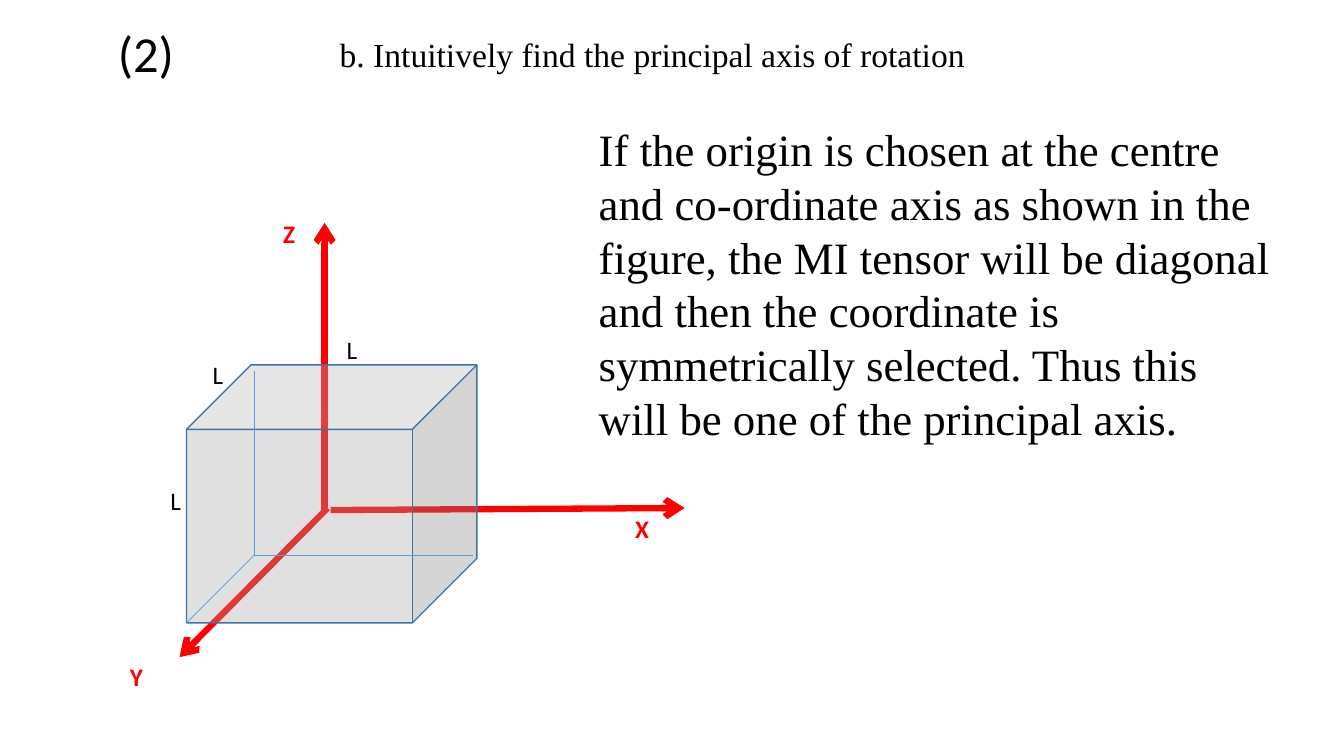
import pptx
import pptx.util
import pptx.dml.color
import pptx.enum.shapes
import pptx.oxml.ns
import lxml.etree
from pptx.util import Inches

RED = pptx.dml.color.RGBColor(0xFF, 0x00, 0x00)
BLACK = pptx.dml.color.RGBColor(0x00, 0x00, 0x00)
GRAY = pptx.dml.color.RGBColor(0xA6, 0xA6, 0xA6)
EDGE_BLUE = pptx.dml.color.RGBColor(0x43, 0x73, 0x9E)
HIDDEN_BLUE = pptx.dml.color.RGBColor(0x5B, 0x9B, 0xD5)

deck = pptx.Presentation()
deck.slide_width, deck.slide_height = Inches(13.33), Inches(7.5)
page = deck.slides.add_slide(deck.slide_layouts[6])


def add_text(text, left, top, width, height, size, font="Calibri",
             color=BLACK, bold=False, wrap=True):
    box = page.shapes.add_textbox(Inches(left), Inches(top), Inches(width), Inches(height))
    box.text_frame.word_wrap = wrap
    para = box.text_frame.paragraphs[0]
    para.text = text
    para.font.size = pptx.util.Pt(size)
    para.font.name = font
    para.font.bold = bold
    para.font.color.rgb = color
    return para


def add_line(start, end, color, weight):
    line = page.shapes.add_connector(
        pptx.enum.shapes.MSO_CONNECTOR.STRAIGHT,
        Inches(start[0]), Inches(start[1]), Inches(end[0]), Inches(end[1]))
    line.line.color.rgb = color
    line.line.width = pptx.util.Pt(weight)
    lxml.etree.SubElement(line._element.spPr, pptx.oxml.ns.qn("a:effectLst"))
    return line


# Axes with arrowheads and labels
axes = [
    ("X", (6.2, 5.04), (3.28, 5.06), (6.79, 5.04)),
    ("Y", (1.19, 6.51), (3.25, 5.04), (1.78, 6.52)),
    ("Z", (2.71, 2.12), (3.22, 5.06), (3.22, 2.21)),
]
for name, (left, top), start, end in axes:
    add_text(name, left, top, 0.65, 0.4, 18, color=RED, bold=True)
    axis = add_line(start, end, RED, 4.5)
    outline = axis._element.spPr.find(pptx.oxml.ns.qn("a:ln"))
    lxml.etree.SubElement(outline, pptx.oxml.ns.qn("a:tailEnd"), type="arrow")

# Translucent cube
cube = page.shapes.add_shape(pptx.enum.shapes.MSO_SHAPE.CUBE,
                             Inches(1.85), Inches(3.62), Inches(2.88), Inches(2.56))
cube.shadow.inherit = False
cube.fill.solid()
cube.fill.fore_color.rgb = GRAY
cube.line.color.rgb = EDGE_BLUE
cube.line.width = pptx.util.Pt(1)
fill_color = cube._element.spPr.find(".//" + pptx.oxml.ns.qn("a:srgbClr"))
lxml.etree.SubElement(fill_color, pptx.oxml.ns.qn("a:alpha"), val="34000")

# Side lengths
for left, top in [(3.34, 3.27), (1.59, 4.77), (2.01, 3.52)]:
    add_text("L", left, top, 0.31, 0.4, 18, wrap=False)

# Hidden edges meet at the back corner
back_corner = (2.52, 5.51)
for corner in [(2.52, 3.68), (4.69, 5.51), (1.85, 6.18)]:
    add_line(back_corner, corner, HIDDEN_BLUE, 0.5)

# Question and answer
question = add_text("b. Intuitively find the principal axis of rotation",
                    2.77, 0.26, 9.64, 0.53, 24, "Times New Roman")
question.line_spacing = 1.07
question.space_after = pptx.util.Pt(8)
question._p.get_or_add_pPr().set("marL", str(Inches(0.5)))
add_text("(2)", 1.07, 0.17, 0.76, 0.71, 36, wrap=False)
add_text("If the origin is chosen at the centre and co-ordinate axis as shown in the "
         "figure, the MI tensor will be diagonal and then the coordinate is "
         "symmetrically selected. Thus this will be one of the principal axis.",
         5.84, 1.16, 6.93, 2.79, 32, "Times New Roman")

deck.save("out.pptx")
